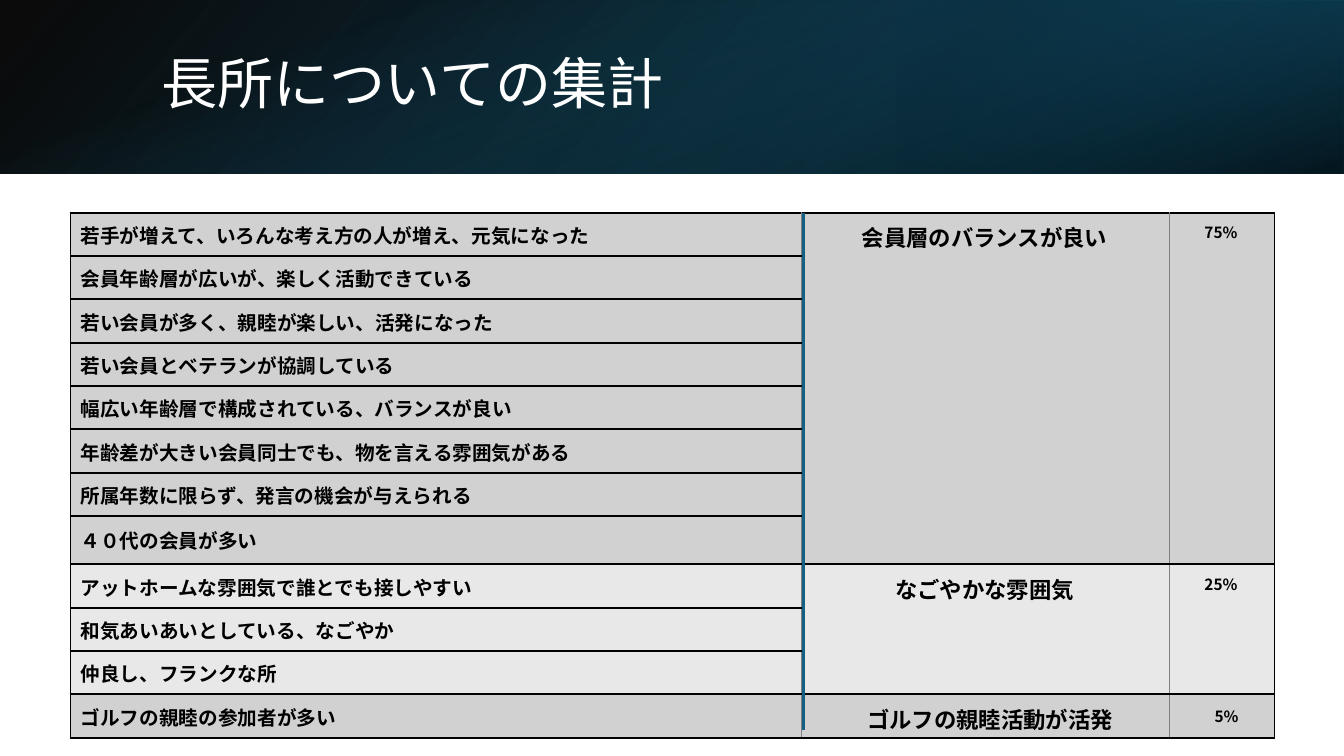
from lxml import etree
from pptx import Presentation
from pptx.dml.color import RGBColor
from pptx.enum.shapes import MSO_CONNECTOR, MSO_SHAPE
from pptx.enum.text import MSO_ANCHOR, PP_ALIGN
from pptx.oxml.ns import qn
from pptx.util import Inches, Pt

RECTANGLE = MSO_SHAPE.RECTANGLE
STRAIGHT = MSO_CONNECTOR.STRAIGHT
TOP, MIDDLE = MSO_ANCHOR.TOP, MSO_ANCHOR.MIDDLE
LEFT, CENTER = PP_ALIGN.LEFT, PP_ALIGN.CENTER
FONT = "Noto Sans CJK JP"
BLACK, WHITE, GREY, BLUE = "000000", "FFFFFF", "808080", "156082"
ROW_HEIGHT, TALL_ROW_HEIGHT = 0.43, 0.48
COLUMN_WIDTHS = (7.25, 3.65, 1.04)
TIGHT, ROOMY = 0.01, 0.12

GROUPS = [
    ("会員層のバランスが良い", "75%", "D1D1D1", [
        "若手が増えて、いろんな考え方の人が増え、元気になった",
        "会員年齢層が広いが、楽しく活動できている",
        "若い会員が多く、親睦が楽しい、活発になった",
        "若い会員とベテランが協調している",
        "幅広い年齢層で構成されている、バランスが良い",
        "年齢差が大きい会員同士でも、物を言える雰囲気がある",
        "所属年数に限らず、発言の機会が与えられる",
        "４０代の会員が多い",
    ]),
    ("なごやかな雰囲気", "25%", "E8E8E8", [
        "アットホームな雰囲気で誰とでも接しやすい",
        "和気あいあいとしている、なごやか",
        "仲良し、フランクな所",
    ]),
    ("ゴルフの親睦活動が活発", "5%", "D1D1D1", ["ゴルフの親睦の参加者が多い"]),
]


def rgb(value):
    return RGBColor.from_string(value)


def write(frame, text, size, color, bold=False, align=LEFT):
    paragraph = frame.paragraphs[0]
    paragraph.text = text
    paragraph.alignment = align
    font = paragraph.font
    font.name, font.size, font.bold = FONT, Pt(size), bold
    font.color.rgb = rgb(color)
    properties = paragraph._p.pPr.find(qn("a:defRPr"))
    etree.SubElement(properties, qn("a:ea"), typeface=FONT)
    return paragraph


def add_band(slide, box, stops, angle, rotation=0, flipped=False):
    band = slide.shapes.add_shape(RECTANGLE, *map(Inches, box))
    band.shadow.inherit = False
    band.line.fill.background()
    band.rotation = rotation
    if flipped:
        band._element.spPr.xfrm.set("flipH", "1")
    band.fill.gradient()
    band.fill.gradient_angle = 360 - angle
    for stop, (position, color, opacity) in zip(band.fill.gradient_stops, stops):
        stop.position = position / 100
        stop.color.rgb = rgb(color)
        tint = stop._gs.find(qn("a:srgbClr"))
        etree.SubElement(tint, qn("a:alpha"), val=str(opacity * 1000))


def add_title(slide, text):
    title = slide.shapes.add_textbox(Inches(1.5), Inches(0.38), Inches(10.98), Inches(0.96))
    frame = title.text_frame
    frame.word_wrap = True
    frame.vertical_anchor = MIDDLE
    write(frame, text, 40, WHITE).line_spacing = 0.9


def set_borders(cell, left, right):
    properties = cell._tc.get_or_add_tcPr()
    sides = (("a:lnL", left), ("a:lnR", right), ("a:lnT", BLACK), ("a:lnB", BLACK))
    for index, (tag, color) in enumerate(sides):
        border = etree.Element(qn(tag), w=str(Pt(1.5 if color == BLACK else 0.5)))
        fill = etree.SubElement(border, qn("a:solidFill"))
        etree.SubElement(fill, qn("a:srgbClr"), val=color)
        properties.insert(index, border)


def style_cell(cell, fill, column):
    cell.fill.solid()
    cell.fill.fore_color.rgb = rgb(fill)
    set_borders(cell, BLACK if column == 0 else GREY, BLACK if column == 2 else GREY)


def fill_cell(cell, text, size, align, anchor, right_margin):
    cell.vertical_anchor = anchor
    cell.margin_left, cell.margin_right = Inches(0.1), Inches(right_margin)
    cell.margin_top = cell.margin_bottom = Inches(0.08)
    write(cell.text_frame, text, size, BLACK, True, align)


def add_summary_table(slide):
    row_count = sum(len(opinions) for *_, opinions in GROUPS)
    table = slide.shapes.add_table(
        row_count, len(COLUMN_WIDTHS), Inches(0.7), Inches(2.11),
        Inches(sum(COLUMN_WIDTHS)), Inches(row_count * ROW_HEIGHT)).table
    table.first_row = table.horz_banding = False
    for column, width in zip(table.columns, COLUMN_WIDTHS):
        column.width = Inches(width)
    for row in table.rows:
        row.height = Inches(ROW_HEIGHT)
    table.rows[len(GROUPS[0][3]) - 1].height = Inches(TALL_ROW_HEIGHT)

    first = 0
    for category, share, fill, opinions in GROUPS:
        last = first + len(opinions) - 1
        for row, opinion in enumerate(opinions, first):
            for column in range(len(COLUMN_WIDTHS)):
                style_cell(table.cell(row, column), fill, column)
            fill_cell(table.cell(row, 0), opinion, 14, LEFT, MIDDLE, TIGHT)
        anchor, margin = (TOP, ROOMY) if last > first else (MIDDLE, TIGHT)
        for column, text, size in ((1, category, 16), (2, share, 11)):
            cell = table.cell(first, column)
            if last > first:
                cell.merge(table.cell(last, column))
            fill_cell(cell, text, size, CENTER, anchor, margin)
        first = last + 1


def add_divider(slide):
    x = Inches(7.97)
    divider = slide.shapes.add_connector(STRAIGHT, x, Inches(2.11), x, Inches(7.24))
    divider.line.color.rgb = rgb(BLUE)
    divider.line.width = Pt(1.5)
    etree.SubElement(divider._element.spPr, qn("a:effectLst"))


def main():
    presentation = Presentation()
    presentation.slide_width, presentation.slide_height = Inches(13.33), Inches(7.5)
    slide = presentation.slides.add_slide(presentation.slide_layouts[6])
    slide.background.fill.solid()
    slide.background.fill.fore_color.rgb = rgb(WHITE)
    add_band(slide, (0, 0, 13.33, 1.72),
             ((0, BLACK, 96), (100, "104862", 100)), 140, flipped=True)
    add_band(slide, (8.89, 0, 4.44, 1.72),
             ((19, "0B3041", 68), (100, BLUE, 79)), 320, 180, True)
    add_band(slide, (5.8, -5.8, 1.72, 13.33),
             ((23, BLUE, 0), (99, BLACK, 74)), 340, 90)
    add_title(slide, "長所についての集計")
    add_summary_table(slide)
    add_divider(slide)
    presentation.save("out.pptx")


if __name__ == "__main__":
    main()
